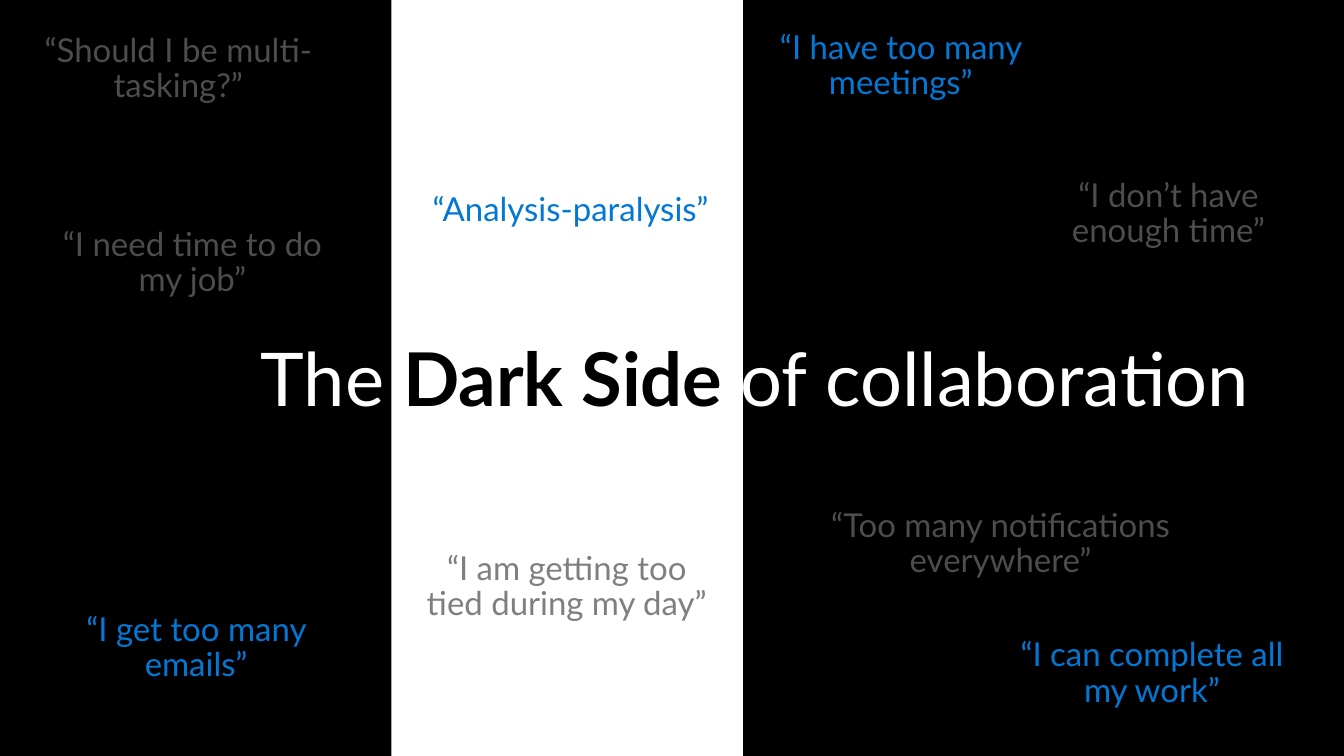
"""Builds the slide on the dark side of collaboration."""
from lxml.etree import SubElement
from pptx import Presentation
from pptx.dml.color import RGBColor as Rgb
from pptx.enum.shapes import MSO_SHAPE as Shape
from pptx.enum.text import MSO_AUTO_SIZE as AutoSize, PP_ALIGN as Align
from pptx.oxml.ns import qn
from pptx.util import Cm, Pt

WIDTH, HEIGHT = 34.54, 19.43
COLOURS = {"black": "000000", "white": "FFFFFF", "blue": "0278D4"}


class SlideBuilder:
    font_name = "Lato"

    def __init__(self, slide):
        self.slide = slide

    def colour(self, name):
        return Rgb.from_string(COLOURS[name])

    def panel(self, left, width):
        panel = self.slide.shapes.add_shape(
            Shape.RECTANGLE, Cm(left), 0, Cm(width), Cm(HEIGHT))
        panel.shadow.inherit = False
        panel.fill.solid()
        panel.fill.fore_color.rgb = self.colour("black")
        panel.line.fill.background()

    def text_frame(self, left, top, width, height):
        box = self.slide.shapes.add_textbox(Cm(left), Cm(top), Cm(width), Cm(height))
        frame = box.text_frame
        frame.word_wrap = True
        frame.auto_size = AutoSize.SHAPE_TO_FIT_TEXT
        return frame

    def title(self, left, top, width, height, parts):
        headline = self.text_frame(left, top, width, height).paragraphs[0]
        headline.font.name = self.font_name
        headline.font.size = Pt(54)
        for words, colour, bold in parts:
            run = headline.add_run()
            run.text = words
            run.font.bold = bold
            run.font.color.rgb = self.colour(colour)

    def quote(self, words, left, top, width, colour, opacity=100, height=2.67):
        frame = self.text_frame(left, top, width, height)
        frame.margin_left = frame.margin_right = Cm(0.51)
        frame.margin_top = frame.margin_bottom = Cm(0.41)
        saying = frame.paragraphs[0]
        saying.text = f"“{words}”"
        saying.alignment = Align.CENTER
        saying.line_spacing = 0.9
        saying.space_after = Pt(6)
        saying.font.name = self.font_name
        saying.font.size = Pt(24)
        saying.font.color.rgb = self.colour(colour)
        if opacity < 100:
            for tint in saying._p.iter(qn("a:srgbClr")):
                SubElement(tint, qn("a:alpha"), val=str(opacity * 1000))


def main():
    deck = Presentation()
    deck.slide_width, deck.slide_height = Cm(WIDTH), Cm(HEIGHT)
    builder = SlideBuilder(deck.slides.add_slide(deck.slide_layouts[6]))

    builder.panel(0, 10.06)
    builder.panel(19.1, WIDTH - 19.1)
    builder.title(6.45, 8.43, 27.15, 2.57, [
        ("The ", "white", False),
        ("Dark Side ", "black", True),
        ("of collaboration", "white", False),
    ])

    builder.quote("I have too many meetings", 19.38, 0.38, 7.54, "blue")
    builder.quote("I get too many emails", 1.27, 15.34, 7.54, "blue")
    builder.quote("I don’t have enough time", 26.26, 4.19, 7.54, "white", 30)
    builder.quote("Too many notifications everywhere", 20.65, 12.67, 10.13, "white", 30)
    builder.quote("I need time to do my job", 0.74, 5.44, 8.41, "white", 30)
    builder.quote("Analysis-paralysis", 10.46, 4.55, 8.41, "blue", height=1.75)
    builder.quote("I can complete all my work", 25.4, 16, 8.41, "blue")
    builder.quote("I am getting too tied during my day", 10.36, 13.77, 8.41, "black", 50)
    builder.quote("Should I be multi-tasking?", 0.38, 0.46, 8.41, "white", 30)

    deck.save("out.pptx")


if __name__ == "__main__":
    main()
